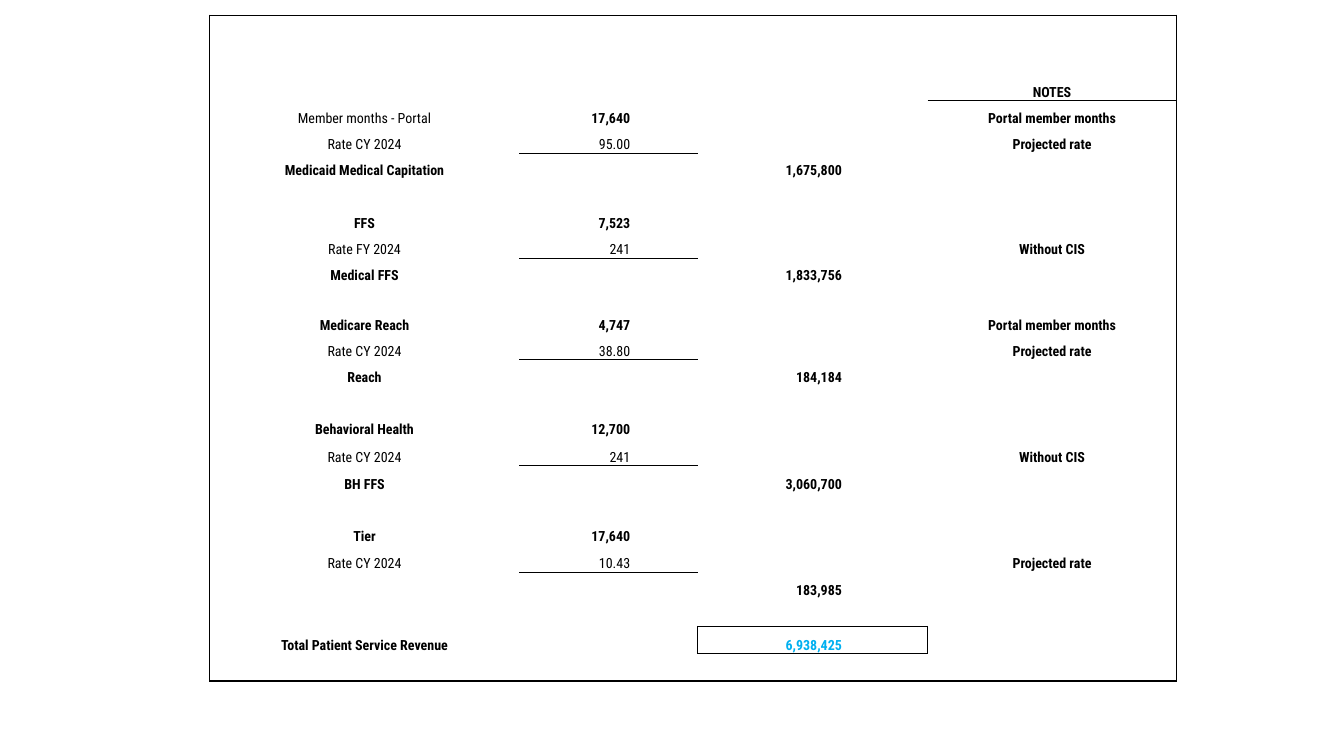
"""Build the patient service revenue slide: one bordered table of rates, volumes and totals."""
from lxml import etree
from pptx import Presentation
from pptx import util as u
from pptx.dml.color import RGBColor
from pptx.enum import text
from pptx.oxml.ns import qn

BLANK = ("", "", "", "")
ROWS = [
    BLANK,
    ("", "", "", "NOTES"),
    ("Member months - Portal", "17,640", "", "Portal member months"),
    ("Rate CY 2024", "95.00", "", "Projected rate"),
    ("Medicaid Medical Capitation", "", "1,675,800", ""),
    BLANK,
    ("FFS", "7,523", "", ""),
    ("Rate FY 2024", "241", "", "Without CIS"),
    ("Medical FFS", "", "1,833,756", ""),
    BLANK,
    ("Medicare Reach", "4,747", "", "Portal member months"),
    ("Rate CY 2024", "38.80", "", "Projected rate"),
    ("Reach", "", "184,184", ""),
    BLANK,
    ("Behavioral Health", "12,700", "", ""),
    ("Rate CY 2024", "241", "", "Without CIS"),
    ("BH FFS", "", "3,060,700", ""),
    BLANK,
    ("Tier", "17,640", "", ""),
    ("Rate CY 2024", "10.43", "", "Projected rate"),
    ("", "", "183,985", ""),
    BLANK,
    ("Total Patient Service Revenue", "", "6,938,425", ""),
    BLANK,
]
LABEL, QUANTITY, AMOUNT, NOTE = range(4)
COLUMN_WIDTHS = [3.07, 1.77, 2.28, 2.47]
ROW_HEIGHTS = [0.59] + [0.26] * 9 + [0.23] + [0.26] * 4 + [0.27] * 2 + [0.26] * 2 + [0.27] * 5
LEFT, TOP = 2.08, 0.15
NUMBER_INSETS = {QUANTITY: 0.67, AMOUNT: 0.85}

THEME = {
    "font": "Roboto Condensed",
    "size": 10,
    "ink": "000000",
    "total": "00B0F0",
    "frame": 1,
    "rule": 0.5,
    "plain_table": "{2D5ABB26-0587-4C30-8999-92F81FD0307C}",
}


def cell_edges(row, column):
    """Return the border widths in points for one cell, keyed by side."""
    label, _, _, note = ROWS[row]
    edges = {}
    if column == LABEL:
        edges["L"] = THEME["frame"]
    if column == NOTE:
        edges["R"] = THEME["frame"]
    if row == 0:
        edges["T"] = THEME["frame"]
    if row == len(ROWS) - 1:
        edges["B"] = THEME["frame"]
    if column == NOTE and note == "NOTES" or column == QUANTITY and label.startswith("Rate"):
        edges["B"] = THEME["rule"]
    if column == AMOUNT and label.startswith("Total"):
        edges = dict.fromkeys("LRTB", THEME["frame"])
    return edges


def draw_edges(cell, edges):
    """Add the border lines in the order the schema requires."""
    properties = cell._tc.get_or_add_tcPr()
    for side in "LRTB":
        if side in edges:
            line = etree.SubElement(properties, qn(f"a:ln{side}"), w=str(u.Pt(edges[side])))
            fill = etree.SubElement(line, qn("a:solidFill"))
            etree.SubElement(fill, qn("a:srgbClr"), val=THEME["ink"])


def write_cell(cell, row, column):
    """Place and format the wording of one cell."""
    label, content = ROWS[row][LABEL], ROWS[row][column]
    cell.vertical_anchor = text.MSO_ANCHOR.BOTTOM
    cell.margin_left = cell.margin_top = u.Inches(0.01)
    cell.margin_right = u.Inches(NUMBER_INSETS.get(column, 0.01))
    cell.margin_bottom = 0
    paragraph = cell.text_frame.paragraphs[0]
    if not content:
        etree.SubElement(paragraph._p, qn("a:endParaRPr"), sz=str(THEME["size"] * 100))
        return
    paragraph.text = content
    paragraph.alignment = text.PP_ALIGN.RIGHT if column in NUMBER_INSETS else text.PP_ALIGN.CENTER
    regular = (column in (LABEL, QUANTITY) and label.startswith("Rate")
               or column == LABEL and label.startswith("Member"))
    is_total = column == AMOUNT and label.startswith("Total")
    font = paragraph.runs[0].font
    font.name = THEME["font"]
    font.size = u.Pt(THEME["size"])
    font.bold = not regular
    font.color.rgb = RGBColor.from_string(THEME["total" if is_total else "ink"])


def main():
    """Assemble and save the slide."""
    deck = Presentation()
    deck.slide_width, deck.slide_height = u.Inches(13.33), u.Inches(7.5)
    slide = deck.slides.add_slide(deck.slide_layouts[6])
    revenue = slide.shapes.add_table(
        len(ROWS), len(COLUMN_WIDTHS), u.Inches(LEFT), u.Inches(TOP),
        u.Inches(sum(COLUMN_WIDTHS)), u.Inches(sum(ROW_HEIGHTS))).table
    revenue.first_row = revenue.horz_banding = False
    revenue._tbl.tblPr.find(qn("a:tableStyleId")).text = THEME["plain_table"]
    for column, width in enumerate(COLUMN_WIDTHS):
        revenue.columns[column].width = u.Inches(width)
    for row, height in enumerate(ROW_HEIGHTS):
        revenue.rows[row].height = u.Inches(height)
        for column in range(len(COLUMN_WIDTHS)):
            cell = revenue.cell(row, column)
            write_cell(cell, row, column)
            draw_edges(cell, cell_edges(row, column))
            cell.fill.background()
    deck.save("out.pptx")


if __name__ == "__main__":
    main()
